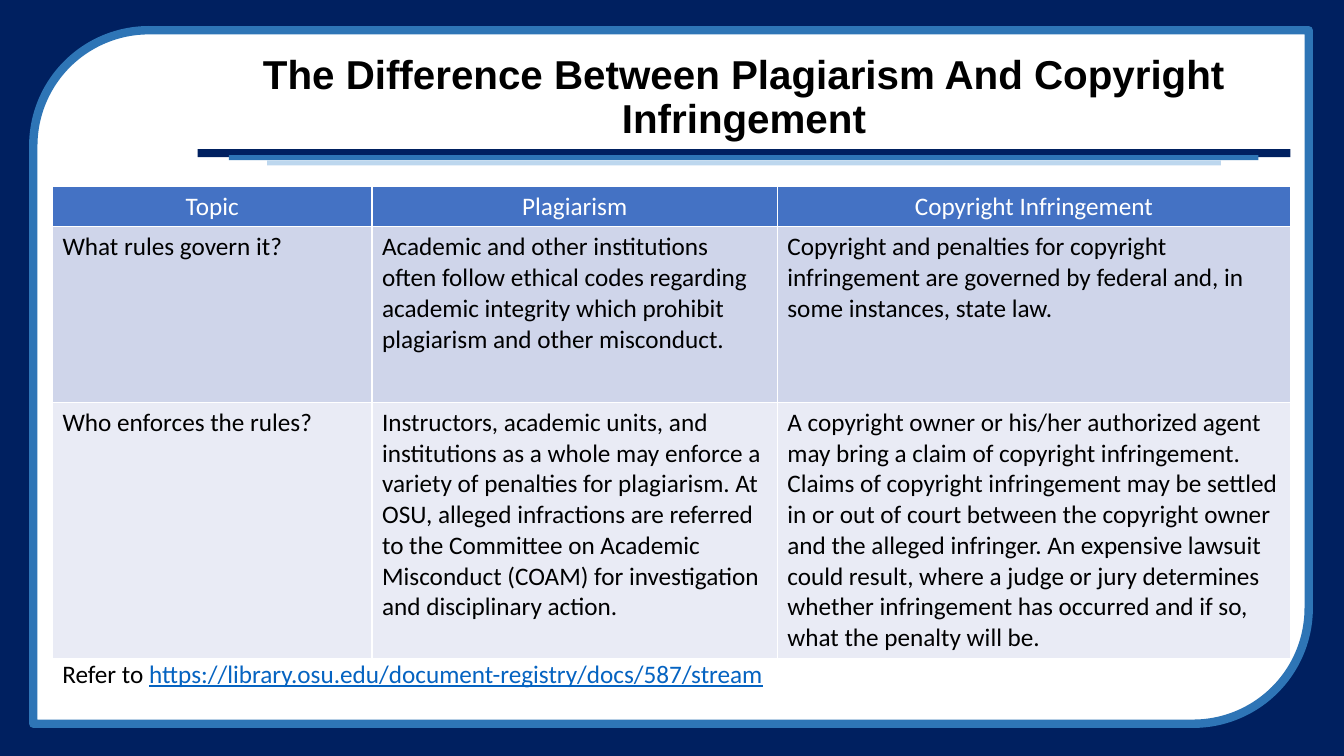
from lxml.etree import SubElement
from pptx import Presentation
from pptx.dml.color import RGBColor
from pptx.enum.shapes import MSO_SHAPE as SHAPE
from pptx.enum.text import MSO_ANCHOR as ANCHOR, PP_ALIGN as ALIGN
from pptx.oxml.ns import qn
from pptx.util import Inches, Pt


def paint(color_format, hex_color):
    """Fill or font colour from a hex string."""
    if hasattr(color_format, "solid"):
        color_format.solid()
        color_format = color_format.fore_color
    color_format.rgb = RGBColor.from_string(hex_color)


def style(r, size, font, color):
    r.font.size, r.font.name = Pt(size), font
    paint(r.font.color, color)


prs = Presentation()
prs.slide_width, prs.slide_height = Inches(13.33), Inches(7.5)
s = prs.slides.add_slide(prs.slide_layouts[6])

# Navy backdrop, white panel and the three rules under the title
for kind, x, y, w, h, color in [
    (SHAPE.RECTANGLE, 0, 0, 13.33, 7.5, "002060"),
    (SHAPE.ROUND_2_DIAG_RECTANGLE, 0.33, 0.3, 12.65, 6.88, "FFFFFF"),
    (SHAPE.RECTANGLE, 1.96, 1.48, 10.84, 0.08, "002060"),
    (SHAPE.RECTANGLE, 2.27, 1.54, 10.21, 0.05, "2E75B6"),
    (SHAPE.RECTANGLE, 2.65, 1.59, 9.46, 0.05, "BDD7EE"),
]:
    sp = s.shapes.add_shape(kind, Inches(x), Inches(y), Inches(w), Inches(h))
    sp.shadow.inherit = False
    paint(sp.fill, color)
    if kind == SHAPE.ROUND_2_DIAG_RECTANGLE:
        paint(sp.line.fill, "2E75B6")
        sp.line.width = Pt(6)
    else:
        sp.line.fill.background()

# Title
title = s.shapes.add_textbox(Inches(1.96), Inches(0.49), Inches(10.84), Inches(0.97))
tf = title.text_frame
tf.word_wrap = True
tf.vertical_anchor = ANCHOR.MIDDLE
tf.text = "The Difference Between Plagiarism And Copyright Infringement"
p = tf.paragraphs[0]
p.alignment = ALIGN.CENTER
p.line_spacing = 0.9
style(p.runs[0], 28.8, "Arial", "000000")
p.runs[0].font.bold = True

# Comparison table
rows = [
    ("Topic", "Plagiarism", "Copyright Infringement"),
    (
        "What rules govern it?",
        "Academic and other institutions often follow ethical codes regarding "
        "academic integrity which prohibit plagiarism and other misconduct.",
        "Copyright and penalties for copyright infringement are governed by "
        "federal and, in some instances, state law.",
    ),
    (
        "Who enforces the rules?",
        "Instructors, academic units, and institutions as a whole may enforce a "
        "variety of penalties for plagiarism. At OSU, alleged infractions are "
        "referred to the Committee on Academic Misconduct (COAM) for "
        "investigation and disciplinary action.",
        "A copyright owner or his/her authorized agent may bring a claim of "
        "copyright infringement. Claims of copyright infringement may be settled "
        "in or out of court between the copyright owner and the alleged "
        "infringer. An expensive lawsuit could result, where a judge or jury "
        "determines whether infringement has occurred and if so, what the "
        "penalty will be.",
    ),
]
row_fills = ["4472C4", "CFD5EA", "E9EBF5"]
table = s.shapes.add_table(
    3, 3, Inches(0.52), Inches(1.85), Inches(12.28), Inches(4.68)
).table
for column, width in zip(table.columns, [3.17, 4.02, 5.09]):
    column.width = Inches(width)
for row, height in zip(table.rows, [0.4, 1.74, 2.54]):
    row.height = Inches(height)

for i, texts in enumerate(rows):
    for j, text in enumerate(texts):
        cell = table.cell(i, j)
        cell.text = text
        p = cell.text_frame.paragraphs[0]
        p.alignment = ALIGN.LEFT if i else ALIGN.CENTER
        style(p.runs[0], 18, "Calibri", "000000" if i else "FFFFFF")
        p.runs[0].font.bold = False
        # Borders come before the fill in the cell properties
        tcPr = cell._tc.get_or_add_tcPr()
        for side in ("lnL", "lnR", "lnT", "lnB"):
            ln = SubElement(tcPr, qn("a:" + side), w=str(Pt(1)))
            SubElement(SubElement(ln, qn("a:solidFill")), qn("a:srgbClr"), val="FFFFFF")
        paint(cell.fill, row_fills[i])

# Reference line
note = s.shapes.add_textbox(Inches(0.52), Inches(6.48), Inches(9.75), Inches(0.4))
tf = note.text_frame
tf.word_wrap = True
p = tf.paragraphs[0]
for text, color in [
    ("Refer to ", "000000"),
    ("https://library.osu.edu/document-registry/docs/587/stream", "0563C1"),
]:
    r = p.add_run()
    r.text = text
    style(r, 18, "Calibri", color)
r.font.underline = True

prs.save("out.pptx")
